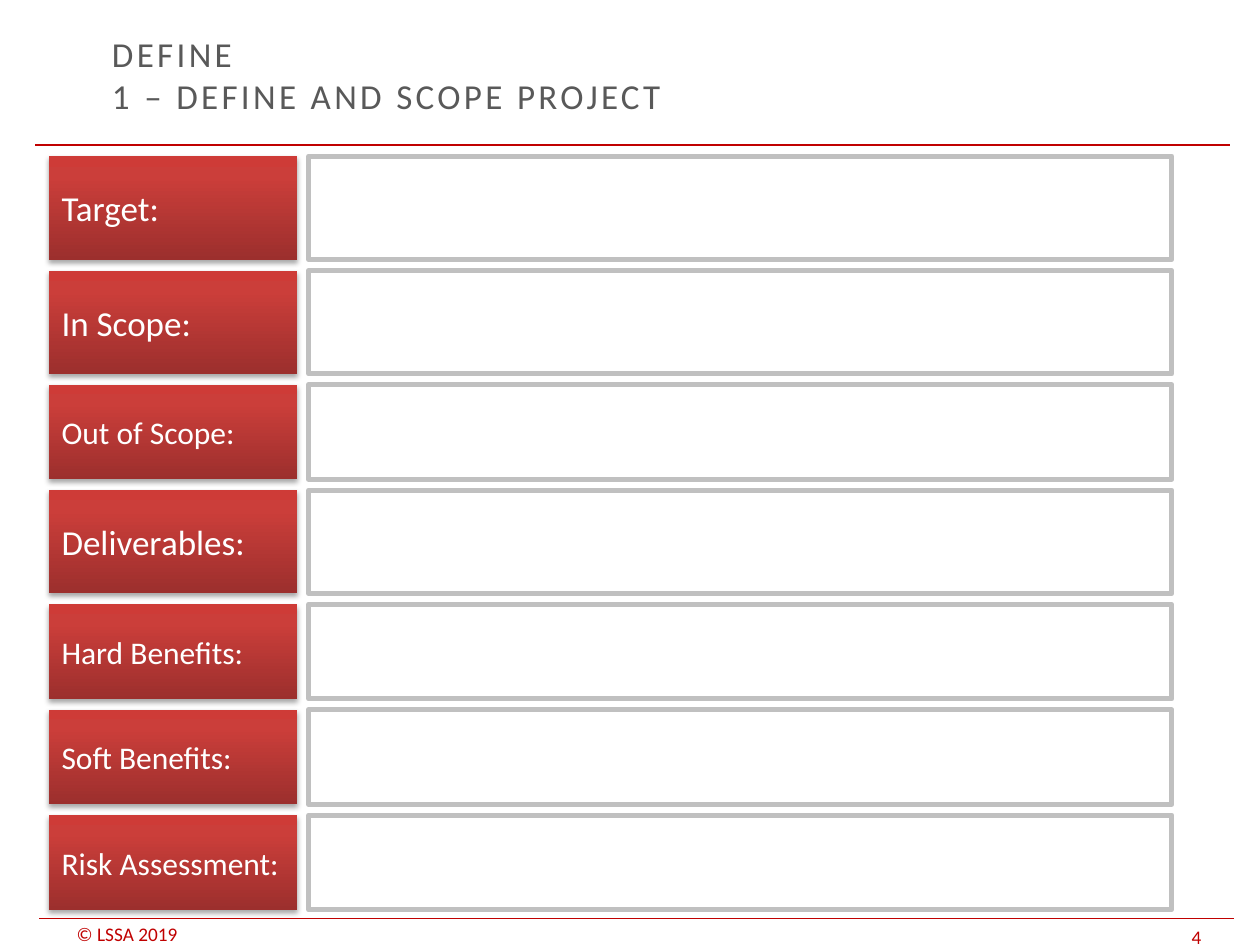
from dataclasses import dataclass

import pptx
import pptx.dml.color
import pptx.enum.shapes
import pptx.enum.text
import pptx.oxml
import pptx.oxml.ns
import pptx.util
from pptx.util import Inches

COLORS = {
    "rule": "C00000",
    "title": "595959",
    "white": "FFFFFF",
    "border": "C0C0C0",
    "dark_red": "9C2F2D",
    "red": "CB3E3A",
    "bright_red": "CE3B37",
    "shadow": "000000",
}
FONT = "Calibri"
TALL, SHORT = 0.82, 0.75
TOP, BOTTOM = 1.24, 7.22
LABEL_LEFT, LABEL_WIDTH = 0.39, 1.97
ENTRY_LEFT, ENTRY_WIDTH = 2.45, 6.85
GRADIENT_STOPS = [(0, "dark_red"), (80, "red"), (100, "bright_red")]
ANCHOR = pptx.enum.text.MSO_ANCHOR


@dataclass(frozen=True)
class Row:
    label: str
    height: float
    size: int


@dataclass(frozen=True)
class Frame:
    left: float
    top: float
    width: float
    height: float

    def lengths(self) -> list:
        return [Inches(n) for n in (self.left, self.top, self.width, self.height)]


ROWS = [
    Row("Target:", TALL, 20),
    Row("In Scope:", TALL, 20),
    Row("Out of Scope:", SHORT, 18),
    Row("Deliverables:", TALL, 20),
    Row("Hard Benefits:", SHORT, 18),
    Row("Soft Benefits:", SHORT, 18),
    Row("Risk Assessment:", SHORT, 18),
]
FOOTERS = [
    ("© LSSA 2019", Frame(0.51, 7.32, 1.42, 0.18)),
    ("4", Frame(9.36, 7.31, 0.64, 0.22)),
]
RULES = [(0.28, 1.15), (0.31, 7.29)]
RULE_LENGTH = 9.48


def rgb(name: str) -> pptx.dml.color.RGBColor:
    return pptx.dml.color.RGBColor.from_string(COLORS[name])


def parse_drawing(xml: str):
    namespace = pptx.oxml.ns.nsdecls("a")
    return pptx.oxml.parse_xml(xml.replace(">", f" {namespace}>", 1))


def write_text(shape, text: str, size: int, color: str, anchor) -> None:
    text_frame = shape.text_frame
    text_frame.word_wrap = True
    text_frame.vertical_anchor = anchor
    para = text_frame.paragraphs[0]
    para.text = text
    para.alignment = pptx.enum.text.PP_ALIGN.LEFT
    para.font.name = FONT
    para.font.size = pptx.util.Pt(size)
    para.font.color.rgb = rgb(color)


def add_rule(page, left: float, top: float) -> None:
    rule = page.shapes.add_connector(
        pptx.enum.shapes.MSO_CONNECTOR.STRAIGHT,
        Inches(left), Inches(top), Inches(left + RULE_LENGTH), Inches(top),
    )
    rule.line.color.rgb = rgb("rule")
    rule.line.width = pptx.util.Pt(0.75)
    rule._element.spPr.append(parse_drawing("<a:effectLst></a:effectLst>"))


def add_title(page) -> None:
    box = page.shapes.add_textbox(*Frame(0.79, 0.26, 7.09, 0.66).lengths())
    write_text(box, "DEFINE\v1 – DEFINE AND SCOPE PROJECT", 20, "title", ANCHOR.MIDDLE)
    for span in box.text_frame.paragraphs[0].runs:
        span.font._element.set("spc", "190")


def add_footer(page, text: str, frame: Frame) -> None:
    box = page.shapes.add_textbox(*frame.lengths())
    box.text_frame.margin_top = box.text_frame.margin_bottom = 0
    write_text(box, text, 11, "rule", ANCHOR.BOTTOM)


def add_rectangle(page, frame: Frame):
    rectangle = page.shapes.add_shape(
        pptx.enum.shapes.MSO_SHAPE.RECTANGLE, *frame.lengths()
    )
    rectangle.shadow.inherit = False
    return rectangle


def add_entry(page, frame: Frame) -> None:
    entry = add_rectangle(page, frame)
    entry.fill.solid()
    entry.fill.fore_color.rgb = rgb("white")
    entry.line.color.rgb = rgb("border")
    entry.line.width = pptx.util.Pt(3)


def add_label(page, row: Row, frame: Frame) -> None:
    label = add_rectangle(page, frame)
    label.line.fill.background()
    stops = "".join(
        f'<a:gs pos="{position * 1000}"><a:srgbClr val="{COLORS[color]}"/></a:gs>'
        for position, color in GRADIENT_STOPS
    )
    properties = label._element.spPr
    properties.find(pptx.oxml.ns.qn("a:prstGeom")).addnext(parse_drawing(
        f'<a:gradFill rotWithShape="1"><a:gsLst>{stops}</a:gsLst>'
        '<a:lin ang="16200000" scaled="0"/></a:gradFill>'
    ))
    properties.find(pptx.oxml.ns.qn("a:effectLst")).append(parse_drawing(
        f'<a:outerShdw blurRad="{pptx.util.Pt(3.1)}" dist="{pptx.util.Pt(1.8)}" '
        'dir="5400000" rotWithShape="0">'
        f'<a:srgbClr val="{COLORS["shadow"]}"><a:alpha val="35000"/></a:srgbClr>'
        "</a:outerShdw>"
    ))
    write_text(label, row.label, row.size, "white", ANCHOR.MIDDLE)


def add_rows(page) -> None:
    gap = (BOTTOM - TOP - sum(row.height for row in ROWS)) / (len(ROWS) - 1)
    top = TOP
    for row in ROWS:
        add_entry(page, Frame(ENTRY_LEFT, top, ENTRY_WIDTH, row.height))
        add_label(page, row, Frame(LABEL_LEFT, top, LABEL_WIDTH, row.height))
        top += row.height + gap


def main() -> None:
    deck = pptx.Presentation()
    deck.slide_width, deck.slide_height = Inches(10), Inches(7.5)
    page = deck.slides.add_slide(deck.slide_layouts[6])
    for text, frame in FOOTERS:
        add_footer(page, text, frame)
    for left, top in RULES:
        add_rule(page, left, top)
    add_title(page)
    add_rows(page)
    deck.save("out.pptx")


if __name__ == "__main__":
    main()
